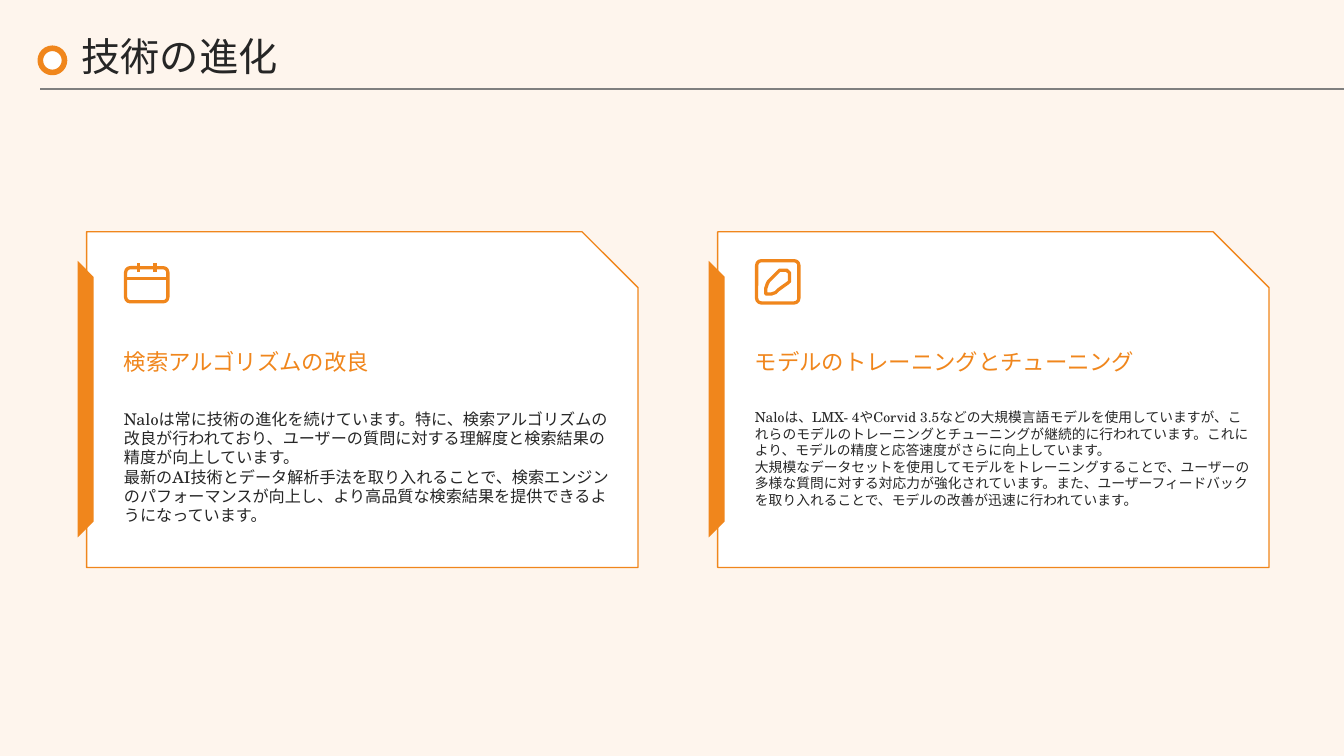
"""Build the slide on technical progress with two snipped-corner cards."""
import math

from lxml import etree
from pptx import Presentation
from pptx.dml.color import RGBColor
from pptx.enum import shapes, text
from pptx.oxml import ns
from pptx.util import Pt

ORANGE = RGBColor(0xF0, 0x86, 0x1C)
CREAM = RGBColor(0xFE, 0xF5, 0xED)
WHITE = RGBColor(0xFF, 0xFF, 0xFF)
DARK = RGBColor(0x26, 0x26, 0x26)
GRAY = RGBColor(0x7F, 0x7F, 0x7F)
FONT = "TeX Gyre Schola"
KIND = shapes.MSO_SHAPE
ICON_STROKE = 2.35

CARDS = [
    ("検索アルゴリズムの改良", 11.5, [
        "Naloは常に技術の進化を続けています。特に、検索アルゴリズムの改良が行われており、ユーザーの質問に対する理解度と検索結果の精度が向上しています。",
        "最新のAI技術とデータ解析手法を取り入れることで、検索エンジンのパフォーマンスが向上し、より高品質な検索結果を提供できるようになっています。",
    ]),
    ("モデルのトレーニングとチューニング", 9.8, [
        "Naloは、LMX- 4やCorvid 3.5などの大規模言語モデルを使用していますが、これらのモデルのトレーニングとチューニングが継続的に行われています。これにより、モデルの精度と応答速度がさらに向上しています。",
        "大規模なデータセットを使用してモデルをトレーニングすることで、ユーザーの多様な質問に対する対応力が強化されています。また、ユーザーフィードバックを取り入れることで、モデルの改善が迅速に行われています。",
    ]),
]
CARD_LEFT, CARD_TOP, CARD_PITCH = 61.92, 165.6, 450.72

presentation = Presentation()
presentation.slide_width, presentation.slide_height = Pt(960), Pt(540)
slide = presentation.slides.add_slide(presentation.slide_layouts[6])
slide.background.fill.solid()
slide.background.fill.fore_color.rgb = CREAM


def paint(shape, fill=None, line=None, width=1):
    if fill is None:
        shape.fill.background()
    else:
        shape.fill.solid()
        shape.fill.fore_color.rgb = fill
    if line is None:
        shape.line.fill.background()
    else:
        shape.line.color.rgb = line
        shape.line.width = Pt(width)
    shape.shadow.inherit = False


def write(box, lines, size, color, anchor):
    frame = slide.shapes.add_textbox(*map(Pt, box)).text_frame
    frame.word_wrap = True
    frame.vertical_anchor = anchor
    frame.margin_left = frame.margin_right = frame.margin_top = frame.margin_bottom = 0
    for index, line in enumerate(lines):
        paragraph = frame.add_paragraph() if index else frame.paragraphs[0]
        run = paragraph.add_run()
        run.text = line
        run.font.name = FONT
        run.font.size = Pt(size)
        run.font.color.rgb = color


for index, (heading, body_size, body) in enumerate(CARDS):
    left = CARD_LEFT + index * CARD_PITCH
    card = slide.shapes.add_shape(
        KIND.SNIP_1_RECTANGLE, Pt(left), Pt(CARD_TOP), Pt(393.84), Pt(239.76))
    paint(card, WHITE, ORANGE)
    side_bar = slide.shapes.add_shape(
        KIND.DIAGONAL_STRIPE, Pt(left - 76.32), Pt(215.28), Pt(139.68), Pt(139.68))
    side_bar.rotation = 135
    side_bar.adjustments[0] = 0.884
    paint(side_bar, ORANGE)
    write((left + 26.64, 223.92, 354.96, 68.4), [heading], 16, ORANGE, text.MSO_ANCHOR.MIDDLE)
    write((left + 26.64, 292.32, 354.96, 100.8), body, body_size, DARK, text.MSO_ANCHOR.TOP)

calendar_left = CARD_LEFT + 27.8
pen_left = calendar_left + CARD_PITCH
for left, top, height in [(calendar_left, 191.2, 24.4), (pen_left, 186.2, 30.2)]:
    icon_frame = slide.shapes.add_shape(
        KIND.ROUNDED_RECTANGLE, Pt(left), Pt(top), Pt(30.2), Pt(height))
    icon_frame.adjustments[0] = 3.4 / height
    paint(icon_frame, line=ORANGE, width=ICON_STROKE)

nib_center_x, nib_center_y, nib_radius = pen_left + 18.8, 198, 5.2
nib = [(nib_center_x + nib_radius * math.cos(math.radians(angle)),
        nib_center_y + nib_radius * math.sin(math.radians(angle)))
       for angle in range(45, -136, -15)]
nib += [(pen_left + x, 186.2 + y)
        for x, y in [(9, 14.5), (7.7, 17.2), (6.9, 20.2), (6.6, 23.6),
                     (10.2, 23.4), (13.4, 22.7), (16, 21.2)]]
builder = slide.shapes.build_freeform(*nib[0], scale=Pt(1))
builder.add_line_segments(nib[1:], close=True)
paint(builder.convert_to_shape(), line=ORANGE, width=ICON_STROKE)

title_ring = slide.shapes.add_shape(KIND.OVAL, Pt(28.8), Pt(34.5), Pt(17.28), Pt(17.28))
paint(title_ring, WHITE, ORANGE, 4)
write((58.32, 23.04, 833.76, 33.84), ["技術の進化"], 28, DARK, text.MSO_ANCHOR.MIDDLE)

RULES = [
    (28.8, 63.36, 960, 63.36, GRAY, 1.25),
    (calendar_left, 199.1, calendar_left + 30.2, 199.1, ORANGE, ICON_STROKE),
    (calendar_left + 9.1, 188, calendar_left + 9.1, 194.4, ORANGE, ICON_STROKE),
    (calendar_left + 21, 188, calendar_left + 21, 194.4, ORANGE, ICON_STROKE),
]
for x1, y1, x2, y2, color, width in RULES:
    rule = slide.shapes.add_connector(
        shapes.MSO_CONNECTOR.STRAIGHT, Pt(x1), Pt(y1), Pt(x2), Pt(y2))
    rule.line.color.rgb = color
    rule.line.width = Pt(width)
    etree.SubElement(rule._element.spPr, ns.qn("a:effectLst"))

presentation.save("out.pptx")
